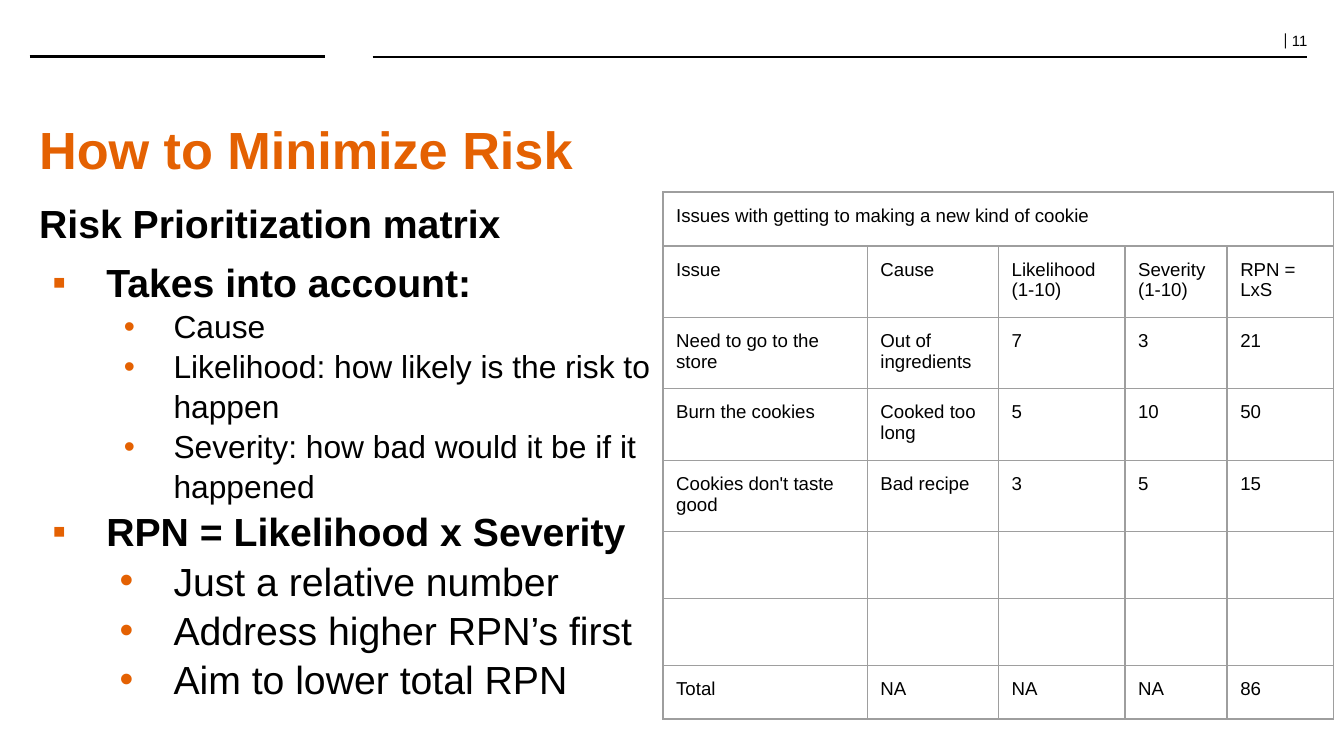
from lxml.etree import SubElement
from pptx import Presentation
from pptx.dml.color import RGBColor
from pptx.enum.shapes import MSO_CONNECTOR
from pptx.enum.text import PP_ALIGN
from pptx.oxml import parse_xml
from pptx.oxml.ns import nsdecls, qn
from pptx.util import Cm, Pt

BLACK, ORANGE, GRAY = "000000", "E46102", "9E9E9E"
COLUMN_WIDTHS = [3.86, 2.48, 2.39, 1.93, 2.01]
ROW_HEIGHTS = [1.02] + [1.3] * 4 + [1.22] * 2 + [1.02]
RISKS = [
    ["Issues with getting to making a new kind of cookie"],
    ["Issue", "Cause", "Likelihood (1-10)", "Severity\n(1-10)", "RPN = LxS"],
    ["Need to go to the store", "Out of ingredients", "7", "3", "21"],
    ["Burn the cookies", "Cooked too long", "5", "10", "50"],
    ["Cookies don't taste good", "Bad recipe", "3", "5", "15"],
    [],
    [],
    ["Total", "NA", "NA", "NA", "86"],
]
TOPIC = dict(bold=True, bullet="▪", indent=1.27, hanging=1.02)
DETAIL = dict(size=17, bullet="•", level=1, indent=2.54, hanging=0.94)
ADVICE = dict(bullet="•", level=1, indent=2.54, hanging=1.02)
OUTLINE = [
    ("Risk Prioritization matrix", dict(bold=True)),
    ("Takes into account:", dict(TOPIC, before=5)),
    ("Cause", DETAIL),
    ("Likelihood: how likely is the risk to happen", DETAIL),
    ("Severity: how bad would it be if it happened", DETAIL),
    ("RPN = Likelihood x Severity", TOPIC),
    ("Just a relative number", ADVICE),
    ("Address higher RPN’s first", ADVICE),
    ("Aim to lower total RPN", ADVICE),
]


def color(value):
    return RGBColor.from_string(value)


def add_bullet(paragraph, character, indent, hanging):
    properties = paragraph._p.get_or_add_pPr()
    properties.set("marL", str(Cm(indent)))
    properties.set("indent", str(-Cm(hanging)))
    bullet_color = SubElement(properties, qn("a:buClr"))
    SubElement(bullet_color, qn("a:srgbClr"), val=ORANGE)
    SubElement(properties, qn("a:buFont"), typeface="Arial")
    SubElement(properties, qn("a:buChar"), char=character)


def add_run(paragraph, text, size, font="Arial", fill=BLACK, bold=False):
    run = paragraph.add_run()
    run.text = text
    run.font.size = Pt(size)
    run.font.name = font
    run.font.bold = bold
    run.font.color.rgb = color(fill)


def write(frame, text, size=21, before=0, spacing=1.05, align=PP_ALIGN.LEFT,
          level=0, bullet=None, indent=0, hanging=0, **run_format):
    """Fill the first paragraph if it is still empty, otherwise add one."""
    paragraph = frame.paragraphs[-1]
    if paragraph.runs:
        paragraph = frame.add_paragraph()
    paragraph.level = level
    paragraph.alignment = align
    paragraph.line_spacing = spacing
    paragraph.space_before = Pt(before)
    if bullet:
        add_bullet(paragraph, bullet, indent, hanging)
    add_run(paragraph, text, size, **run_format)
    return paragraph


def add_text_area(slide, left, top, width, height):
    frame = slide.shapes.add_textbox(Cm(left), Cm(top), Cm(width), Cm(height)).text_frame
    frame.word_wrap = True
    frame.margin_left = frame.margin_right = Cm(0.18)
    frame.margin_top = frame.margin_bottom = Cm(0.1)
    return frame


def add_rule(slide, start, end, weight):
    y = Cm(1.07)
    rule = slide.shapes.add_connector(MSO_CONNECTOR.STRAIGHT, Cm(start), y, Cm(end), y)
    rule.line.color.rgb = color(BLACK)
    rule.line.width = Pt(weight)
    SubElement(rule._element.spPr, qn("a:effectLst"))


def format_cell(cell):
    cell.margin_left = cell.margin_right = Cm(0.25)
    cell.margin_top = cell.margin_bottom = Cm(0.25)
    properties = cell._tc.get_or_add_tcPr()
    for side in ("lnL", "lnR", "lnT", "lnB"):
        properties.append(parse_xml(
            f'<a:{side} {nsdecls("a")} w="{Pt(0.75)}"><a:solidFill>'
            f'<a:srgbClr val="{GRAY}"/></a:solidFill></a:{side}>'))
    cell.fill.background()


def add_risk_table(slide):
    table = slide.shapes.add_table(
        len(ROW_HEIGHTS), len(COLUMN_WIDTHS), Cm(12.53), Cm(3.63),
        Cm(sum(COLUMN_WIDTHS)), Cm(sum(ROW_HEIGHTS))).table
    table.first_row = table.horz_banding = False
    for column, width in zip(table.columns, COLUMN_WIDTHS):
        column.width = Cm(width)
    for row, height in zip(table.rows, ROW_HEIGHTS):
        row.height = Cm(height)
        for cell in row.cells:
            format_cell(cell)
    table.cell(0, 0).merge(table.cell(0, len(COLUMN_WIDTHS) - 1))
    for row, texts in zip(table.rows, RISKS):
        for cell, text in zip(row.cells, texts):
            for line in text.split("\n"):
                write(cell.text_frame, line, size=10, spacing=1.0)


def main():
    presentation = Presentation()
    presentation.slide_width, presentation.slide_height = Cm(25.4), Cm(14.29)
    slide = presentation.slides.add_slide(presentation.slide_layouts[6])

    page_number = write(add_text_area(slide, 22.3, 0.53, 2.59, 0.51), "| ",
                        size=9, font="Cambria", spacing=0.8, align=PP_ALIGN.RIGHT)
    add_run(page_number, "11", 8)
    add_rule(slide, 0.56, 6.15, 2)
    add_rule(slide, 7.04, 24.71, 1)

    write(add_text_area(slide, 0.56, 2.05, 24.16, 1.45), "How to Minimize Risk",
          size=28, fill=ORANGE, bold=True)
    outline = add_text_area(slide, 0.56, 3.63, 12.6, 7.85)
    for text, text_format in OUTLINE:
        write(outline, text, **text_format)
    add_risk_table(slide)

    presentation.save("out.pptx")


if __name__ == "__main__":
    main()
